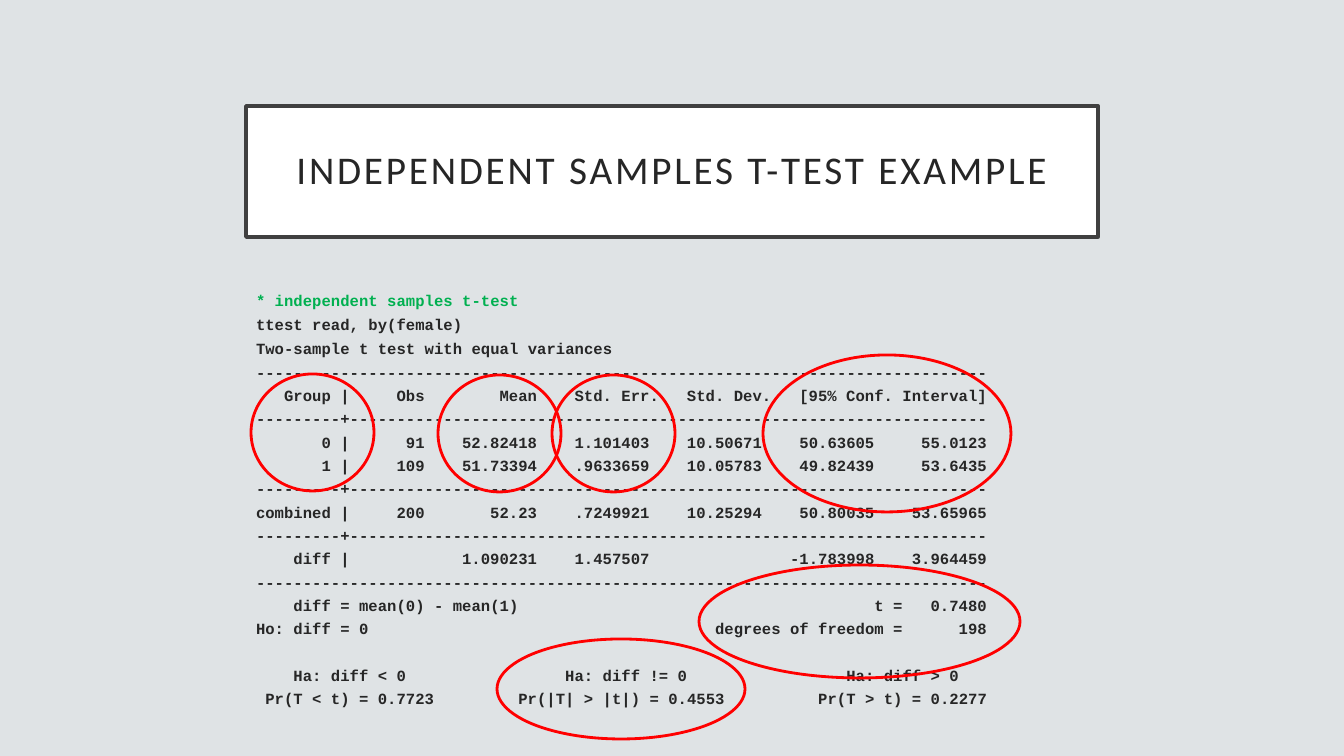
from lxml import etree
from pptx import Presentation
from pptx.dml.color import RGBColor
from pptx.enum.shapes import MSO_SHAPE
from pptx.enum.text import MSO_ANCHOR, PP_ALIGN
from pptx.oxml.ns import qn
from pptx.util import Pt

RECT, OVAL = MSO_SHAPE.RECTANGLE, MSO_SHAPE.OVAL
TOP, MIDDLE = MSO_ANCHOR.TOP, MSO_ANCHOR.MIDDLE
LEFT, CENTER = PP_ALIGN.LEFT, PP_ALIGN.CENTER

PALE = RGBColor(0xDF, 0xE3, 0xE5)
WHITE = RGBColor(0xFF, 0xFF, 0xFF)
GREY = RGBColor(0x40, 0x40, 0x40)
INK = RGBColor(0x26, 0x26, 0x26)
GREEN = RGBColor(0x00, 0xB0, 0x50)
RED = RGBColor(0xFF, 0x00, 0x00)

# Content: each line is its tab stops (side and column) and its cells
TITLE = "INDEPENDENT SAMPLES T-TEST EXAMPLE"
TITLE_BOX = (246, 106, 852, 131)
BODY_BOX = (246, 290, 852, 449)
WIDE = 78
RULE = ("", ["-" * WIDE])
CROSS = ("", ["-" * 9 + "+" + "-" * (WIDE - 10)])
HEAD = "r10 r18 r30 r43 r55 r78"
DATA = "r10 r18 r30 r42 r54 r66 r78"
INTRO = [
    ("", ["* independent samples t-test"]),
    ("", ["ttest read, by(female)"]),
]
OUTPUT = [
    ("", ["Two-sample t test with equal variances"]),
    RULE,
    (HEAD, ["Group |", "Obs", "Mean", "Std. Err.", "Std. Dev.",
            "[95% Conf. Interval]"]),
    CROSS,
    (DATA, ["0 |", "91", "52.82418", "1.101403", "10.50671", "50.63605", "55.0123"]),
    (DATA, ["1 |", "109", "51.73394", ".9633659", "10.05783", "49.82439", "53.6435"]),
    CROSS,
    (DATA, ["combined |", "200", "52.23", ".7249921", "10.25294", "50.80035", "53.65965"]),
    CROSS,
    ("r10 r30 r42 r66 r78", ["diff |", "1.090231", "1.457507", "-1.783998", "3.964459"]),
    RULE,
    ("l4 r69 r78", ["diff = mean(0) - mean(1)", "t =", "0.7480"]),
    ("r69 r78", ["Ho: diff = 0", "degrees of freedom =", "198"]),
]
TESTS = [
    ("l4 l33 l63", ["Ha: diff < 0", "Ha: diff != 0", "Ha: diff > 0"]),
    ("l1 l28 l60", ["Pr(T < t) = 0.7723", "Pr(|T| > |t|) = 0.4553", "Pr(T > t) = 0.2277"]),
]
RINGS = [
    (438, 375, 123, 117),
    (251, 374, 123, 117),
    (552, 375, 123, 117),
    (763, 355, 248, 157),
    (497, 639, 248, 100),
    (699, 565, 321, 113),
]

SCALE = 914400 / 100.8
CHAR = 9.37  # width of one letter of the printout, in px


def emu(px):
    return round(px * SCALE)


def set_frame(shape, inset, anchor):
    frame = shape.text_frame
    frame.word_wrap = True
    frame.vertical_anchor = anchor
    frame.margin_left = frame.margin_right = emu(inset[0])
    frame.margin_top = frame.margin_bottom = emu(inset[1])
    return frame


def add_text(para, text, font="Courier New", size=11.1, color=INK, bold=True,
             align=LEFT, line=0.5, before=10, track=0, stops=""):
    para.alignment = align
    para.line_spacing = line
    para.space_before = Pt(before)
    run = para.add_run()
    run.text = text
    run.font.name = font
    run.font.size = Pt(size)
    run.font.bold = bold
    run.font.color.rgb = color
    if track:
        run.font._element.set("spc", str(track * 100))
    if stops:
        tabs = etree.SubElement(para._p.get_or_add_pPr(), qn("a:tabLst"))
        for stop in stops.split():
            etree.SubElement(tabs, qn("a:tab"), algn=stop[0],
                             pos=str(emu(int(stop[1:]) * CHAR)))


def add_form(slide, kind, box, line, width, fill=None):
    shape = slide.shapes.add_shape(kind, *map(emu, box))
    shape.shadow.inherit = False
    if fill is None:
        shape.fill.background()
    else:
        shape.fill.solid()
        shape.fill.fore_color.rgb = fill
    shape.line.color.rgb = line
    shape.line.width = Pt(width)
    return shape


def main():
    deck = Presentation()
    deck.slide_width, deck.slide_height = emu(1344), emu(756)
    slide = deck.slides.add_slide(deck.slide_layouts[6])
    slide.background.fill.solid()
    slide.background.fill.fore_color.rgb = PALE

    # Title
    card = add_form(slide, RECT, TITLE_BOX, GREY, 2.5, WHITE)
    frame = set_frame(card, (20, 20), MIDDLE)
    add_text(frame.paragraphs[0], TITLE, font="Calibri", size=28, bold=False,
             align=CENTER, line=0.9, before=0, track=2)

    # Printout, with a wider gap above the tests
    frame = set_frame(slide.shapes.add_textbox(*map(emu, BODY_BOX)), (10, 5), TOP)
    for i, (stops, cells) in enumerate(INTRO + OUTPUT + TESTS):
        para = frame.add_paragraph() if i else frame.paragraphs[0]
        look = {"stops": stops}
        if i < len(INTRO):
            look.update(line=0.8, before=6, color=INK if i else GREEN)
        elif i == len(INTRO + OUTPUT):
            look.update(before=26.7)
        lead = "\t" * (len(stops.split()) - len(cells) + 1) if stops else ""
        add_text(para, lead + "\t".join(cells), **look)

    # Red rings
    for box in RINGS:
        add_form(slide, OVAL, box, RED, 2)

    deck.save("out.pptx")


if __name__ == "__main__":
    main()
